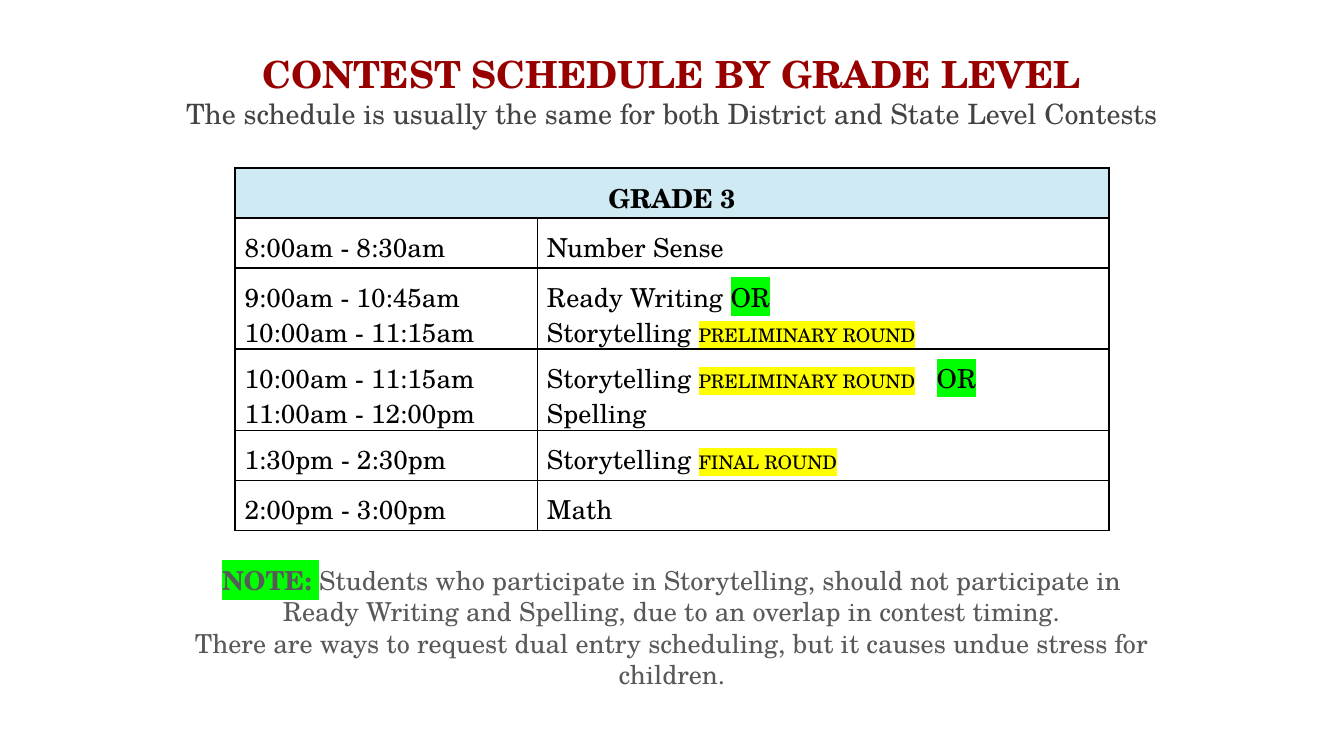
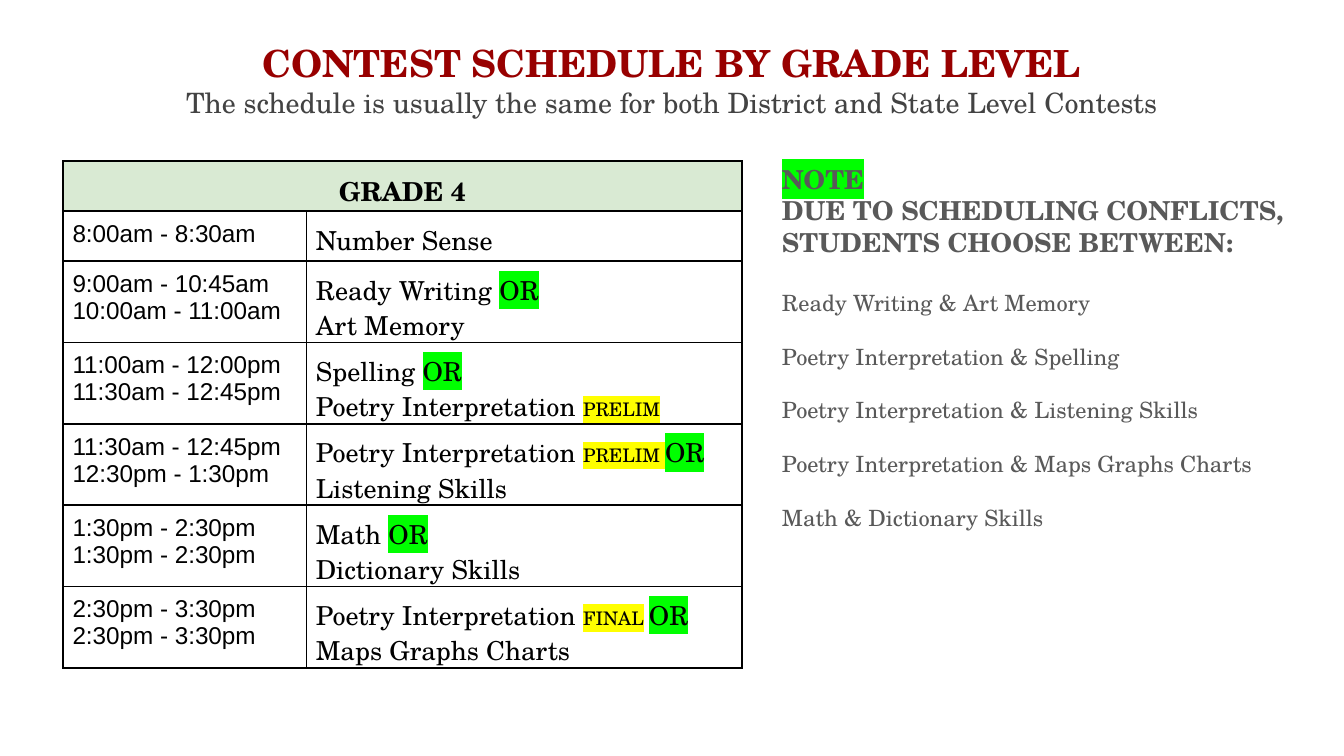
from lxml import etree
from pptx import Presentation
from pptx import util as u
from pptx.dml.color import RGBColor
from pptx.enum import text as t
from pptx.oxml import ns

WIDTH, HEIGHT = u.Inches(10), u.Inches(5.625)
SERIF, SANS = "TeX Gyre Schola", "Arial"
MAROON, CHARCOAL, GREY, BLACK = "980000", "434343", "595959", "000000"
GREEN, YELLOW = "00FF00", "FFFF00"
SKY, SAGE = "CFEAF3", "D9EAD3"
ROW_BASE, ROW_LINE = 2.46, 4.15
TIGHT = 0.86

OR = ("OR", {"highlight": GREEN})


def stage(words):
    """Return a run that marks the round of a contest."""
    return words, {"size": 10, "highlight": YELLOW}


GRADE_3 = [
    (["8:00am - 8:30am"], [["Number Sense"]]),
    (["9:00am - 10:45am", "10:00am - 11:15am"],
     [["Ready Writing ", OR], ["Storytelling ", stage("PRELIMINARY ROUND")]]),
    (["10:00am - 11:15am", "11:00am - 12:00pm"],
     [["Storytelling ", stage("PRELIMINARY ROUND"), "\t", OR], ["Spelling"]]),
    (["1:30pm - 2:30pm"], [["Storytelling ", stage("FINAL ROUND")]]),
    (["2:00pm - 3:00pm"], [["Math"]]),
]
GRADE_4 = [
    (["8:00am - 8:30am"], [["Number Sense"]]),
    (["9:00am - 10:45am", "10:00am - 11:00am"],
     [["Ready Writing ", OR], ["Art Memory"]]),
    (["11:00am - 12:00pm", "11:30am - 12:45pm"],
     [["Spelling ", OR], ["Poetry Interpretation ", stage("PRELIM")]]),
    (["11:30am - 12:45pm", "12:30pm - 1:30pm"],
     [["Poetry Interpretation ", stage("PRELIM "), OR], ["Listening Skills"]]),
    (["1:30pm - 2:30pm", "1:30pm - 2:30pm"],
     [["Math ", OR], ["Dictionary Skills"]]),
    (["2:30pm - 3:30pm", "2:30pm - 3:30pm"],
     [["Poetry Interpretation ", stage("FINAL"), (" ", {"size": 10}), OR],
      ["Maps Graphs Charts"]]),
]
CHOICES = [
    "Ready Writing & Art Memory",
    "Poetry Interpretation & Spelling",
    "Poetry Interpretation & Listening Skills",
    "Poetry Interpretation & Maps Graphs Charts",
    "Math & Dictionary Skills",
]


def across(share):
    """Turn a percentage of the slide width into a length."""
    return u.Emu(round(WIDTH * share / 100))


def down(share):
    """Turn a percentage of the slide height into a length."""
    return u.Emu(round(HEIGHT * share / 100))


def color(value):
    """Turn a hex string into a colour."""
    return RGBColor.from_string(value)


def add_run(paragraph, words, size=14, font=SERIF, ink=BLACK, bold=False,
            highlight=None):
    """Add a formatted run to a paragraph."""
    run = paragraph.add_run()
    run.text = words
    run.font.size, run.font.bold = u.Pt(size), bold
    run.font.color.rgb = color(ink)
    if highlight:
        marker = etree.Element(ns.qn("a:highlight"))
        etree.SubElement(marker, ns.qn("a:srgbClr"), val=highlight)
        run.font._element.find(ns.qn("a:solidFill")).addnext(marker)
    run.font.name = font


def add_line(frame, runs, align=t.PP_ALIGN.LEFT, before=0, spacing=None, **style):
    """Write one paragraph of runs, each a string or a (string, format) pair."""
    paragraph = frame.paragraphs[0]
    if paragraph.runs:
        paragraph = frame.add_paragraph()
    paragraph.alignment = align
    paragraph.space_before = u.Pt(before)
    if spacing:
        paragraph.line_spacing = spacing
    for run in runs:
        words, extra = (run, {}) if isinstance(run, str) else run
        add_run(paragraph, words, **{**style, **extra})
        if words == "\t":
            stops = etree.SubElement(paragraph._p.get_or_add_pPr(), ns.qn("a:tabLst"))
            etree.SubElement(stops, ns.qn("a:tab"), pos=str(u.Inches(2.9)), algn="l")


def prepare_frame(frame):
    """Give a text frame wrapping, top anchoring and even insets."""
    frame.word_wrap = True
    frame.auto_size = t.MSO_AUTO_SIZE.NONE
    frame.vertical_anchor = t.MSO_ANCHOR.TOP
    frame.margin_left = frame.margin_right = u.Inches(0.1)
    frame.margin_top = frame.margin_bottom = u.Inches(0.1)
    return frame


def add_heading(slide, top):
    """Fill the title placeholder with the heading and its subtitle."""
    title = slide.shapes.title
    title.left, title.top = across(3.4), down(top)
    title.width, title.height = across(93.2), down(14.04)
    frame = prepare_frame(title.text_frame)
    center = t.PP_ALIGN.CENTER
    add_line(frame, ["CONTEST SCHEDULE BY GRADE LEVEL"], center,
             size=20, ink=MAROON, bold=True)
    add_line(frame, ["The schedule is usually the same for both District and "
                     "State Level Contests"], center, size=15, ink=CHARCOAL)


def add_note(slide, left, top, width, height):
    """Add a text box for a note and return its frame."""
    box = slide.shapes.add_textbox(across(left), down(top), across(width), down(height))
    return prepare_frame(box.text_frame)


def format_cell(cell):
    """Set the margins and black borders of a cell and clear its fill."""
    cell.margin_left = cell.margin_right = cell.margin_top = u.Inches(0.07)
    cell.margin_bottom = 0
    properties = cell._tc.get_or_add_tcPr()
    for side in ("L", "R", "T", "B"):
        border = etree.SubElement(properties, ns.qn("a:ln" + side), w=str(u.Pt(1)))
        ink = etree.SubElement(border, ns.qn("a:solidFill"))
        etree.SubElement(ink, ns.qn("a:srgbClr"), val=BLACK)
    cell.fill.background()


def fill_cell(cell, lines, font=SERIF, **style):
    """Write the lines of a cell, setting the later serif lines tighter."""
    for index, runs in enumerate(lines):
        spacing = TIGHT if index and font == SERIF else None
        add_line(cell.text_frame, runs, spacing=spacing, font=font, **style)


def add_schedule(slide, grade, sessions, left, top, columns, band, **time_style):
    """Add the timetable of one grade under a banner row."""
    heights = [ROW_BASE + ROW_LINE * count
               for count in [1] + [len(times) for times, _ in sessions]]
    table = slide.shapes.add_table(
        len(heights), 2, across(left), down(top),
        across(sum(columns)), down(sum(heights))).table
    for column, width in zip(table.columns, columns):
        column.width = across(width)
    for row, height in zip(table.rows, heights):
        row.height = down(height)
    for cell in table.iter_cells():
        format_cell(cell)
    banner = table.cell(0, 0)
    banner.merge(table.cell(0, 1))
    banner.fill.solid()
    banner.fill.fore_color.rgb = color(band)
    add_line(banner.text_frame, [grade], t.PP_ALIGN.CENTER, bold=True)
    for index, (times, contests) in enumerate(sessions, 1):
        fill_cell(table.cell(index, 0), [[time] for time in times], **time_style)
        fill_cell(table.cell(index, 1), contests)


def build_grade_3(slide):
    """Build the schedule of grade 3 with the note below it."""
    note = add_note(slide, 12.75, 72.89, 74.5, 20.27)
    label = ("NOTE: ", {"bold": True, "highlight": GREEN})
    for runs in (
        [label, "Students who participate in Storytelling, should not participate "
                "in Ready Writing and Spelling, due to an overlap in contest timing."],
        ["There are ways to request dual entry scheduling, but it causes undue "
         "stress for children."],
    ):
        add_line(note, runs, t.PP_ALIGN.CENTER, ink=GREY)
    add_schedule(slide, "GRADE 3", GRADE_3, 17.5, 22.22, (22.5, 42.5), SKY)
    add_heading(slide, 5)


def build_grade_4(slide):
    """Build the schedule of grade 4 with the choices beside it."""
    note = add_note(slide, 57.2, 19.85, 40.3, 52.62)
    add_line(note, ["NOTE"], ink=GREY, bold=True, highlight=GREEN)
    add_line(note, ["DUE TO SCHEDULING CONFLICTS, STUDENTS CHOOSE BETWEEN:"],
             ink=GREY, bold=True)
    for index, choice in enumerate(CHOICES):
        add_line(note, [choice], before=14.4 if index else 16.8, size=12, ink=GREY)
    add_schedule(slide, "GRADE 4", GRADE_4, 4.7, 21.33, (18.1, 32.4), SAGE,
                 size=13, font=SANS)
    add_heading(slide, 3.56)


def main():
    """Build and save the presentation."""
    deck = Presentation()
    deck.slide_width, deck.slide_height = WIDTH, HEIGHT
    for build in (build_grade_3, build_grade_4):
        build(deck.slides.add_slide(deck.slide_layouts[5]))
    deck.save("out.pptx")


if __name__ == "__main__":
    main()
